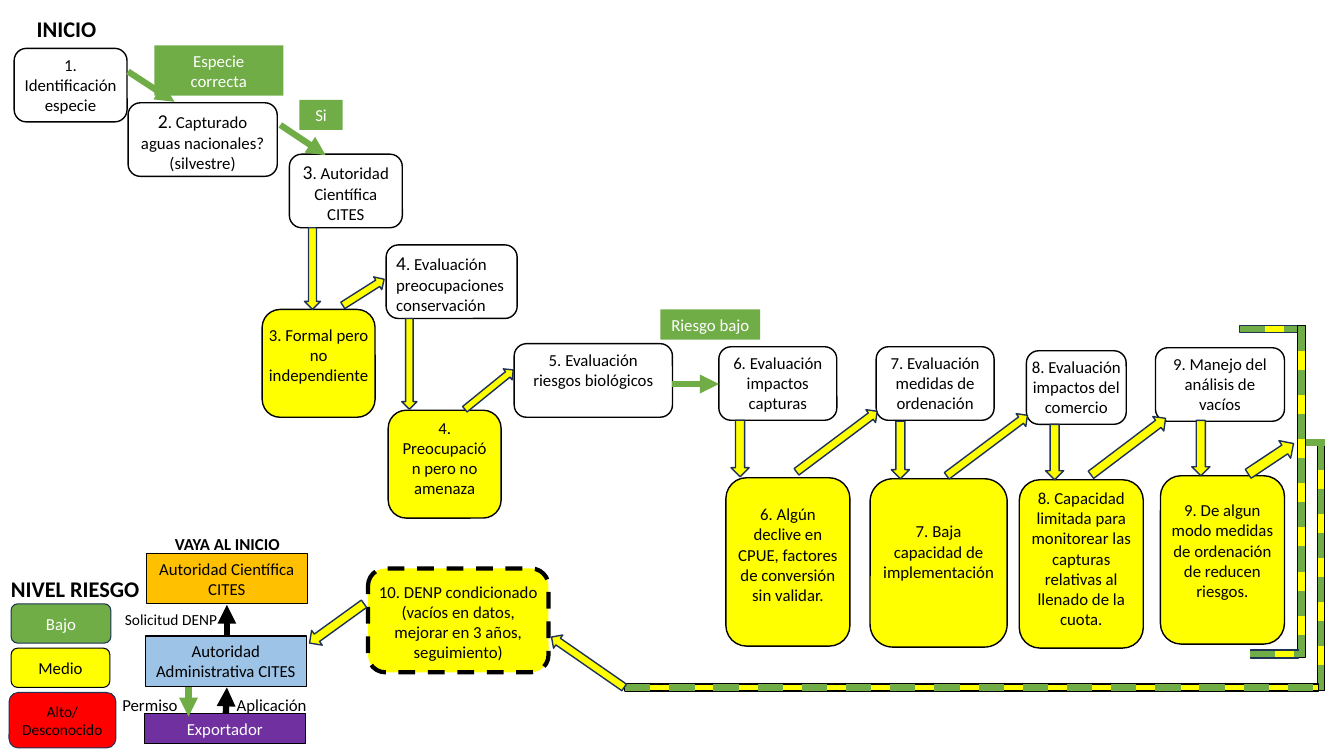
from math import atan2, degrees, hypot

from lxml import etree
from pptx import Presentation
from pptx.dml.color import RGBColor
from pptx.enum.dml import MSO_LINE
from pptx.enum.shapes import MSO_CONNECTOR, MSO_SHAPE
from pptx.enum.text import MSO_ANCHOR, PP_ALIGN
from pptx.oxml.ns import qn
from pptx.util import Inches, Pt

LEFT, MID, RIGHT = PP_ALIGN.LEFT, PP_ALIGN.CENTER, PP_ALIGN.RIGHT
TOP, HALF = MSO_ANCHOR.TOP, MSO_ANCHOR.MIDDLE
RECT, ROUND, DOWN = MSO_SHAPE.RECTANGLE, MSO_SHAPE.ROUNDED_RECTANGLE, MSO_SHAPE.DOWN_ARROW
DASH, LINE = MSO_LINE.DASH, MSO_CONNECTOR.STRAIGHT
BLACK, WHITE, GREEN, YELLOW, NAVY = "000000", "FFFFFF", "70AD47", "FFFF00", "1E3256"
CELL = 0.01
COLS, ROWS = 1333, 750
STEP = 73
CURVE = 0.1667 * 0.2929

# column, row, width, number, text, number size, alignment
steps = [
    (14, 48, 112, "1", "Identificación especie", 12, MID),
    (127, 102, 148, "2", "Capturado aguas nacionales? (silvestre)", 14, MID),
    (287, 153, 112, "3", "Autoridad Científica CITES", 14, MID),
    (383, 243, 130, "4", "Evaluación preocupaciones conservación", 14, LEFT),
    (510, 341, 157, "5", "Evaluación riesgos biológicos", 12, MID),
    (713, 344, 117, "6", "Evaluación impactos capturas", 12, MID),
    (869, 344, 117, "7", "Evaluación medidas de ordenación", 12, MID),
    (1018, 348, 99, "8", "Evaluación impactos del comercio", 12, MID),
    (1146, 345, 128, "9", "Manejo del análisis de vacíos", 12, MID),
]
risks = [
    ((260, 307, 112, 107), "3. Formal pero no independiente", 5, 15),
    ((385, 407, 112, 107), "4. Preocupación pero no amenaza", 10, 7),
    ((720, 474, 123, 167), "6. Algún declive en CPUE, factores de conversión sin validar.", 10, 26),
    ((863, 475, 136, 167), "7. Baja capacidad de implementación", 10, 42),
    ((1011, 476, 123, 167), "8. Capacidad limitada para monitorear las capturas relativas al llenado de la cuota.", 10, 8),
    ((1151, 472, 123, 167), "9. De algun modo medidas de ordenación de reducen riesgos.", 10, 24),
]
verdict = ((365, 564, 179, 103),
           "10. DENP condicionado\n(vacíos en datos, mejorar en 3 años, seguimiento)", 9, 13)
labels = [
    ((153, 45, 128, 50), "Especie correcta"),
    ((297, 99, 43, 30), "Si"),
    ((655, 307, 99, 30), "Riesgo bajo"),
]
actors = [
    ((145, 549, 160, 50), "Autoridad Científica CITES", "FFC000", BLACK),
    ((144, 631, 160, 50), "Autoridad Administrativa CITES", "9DC3E6", BLACK),
    ((143, 708, 160, 30), "Exportador", "7030A0", WHITE),
]
levels = [
    ((11, 599, 99, 39), "Bajo", GREEN, WHITE, NAVY, 12),
    ((11, 643, 98, 39), "Medio", YELLOW, BLACK, BLACK, 12),
    ((9, 687, 106, 55), "Alto/ Desconocido", "FF0000", BLACK, NAVY, 11),
]
notes = [
    ((3, 10, 126, 37), "INICIO", 16, True, MID),
    ((1, 566, 149, 37), "NIVEL RIESGO", 16, True, LEFT),
    ((141, 525, 169, 30), "VAYA AL INICIO", 12, True, MID),
    ((114, 600, 137, 29), "Solicitud DENP", 11, False, LEFT),
    ((109, 684, 77, 30), "Permiso", 12, False, RIGHT),
    ((225, 684, 103, 30), "Aplicación", 12, False, LEFT),
]
blocks = [
    (310, 226, 310, 307, 16), (406, 316, 406, 406, 15),
    (734, 417, 734, 473, 18), (893, 418, 893, 475, 18),
    (1046, 421, 1046, 476, 18), (1191, 417, 1191, 472, 18),
    (340, 303, 381, 277, 15), (461, 406, 509, 367, 14),
    (790, 468, 870, 408, 16), (939, 472, 1019, 412, 16),
    (1082, 471, 1156, 415, 18), (1238, 470, 1283, 440, 21),
    (361, 599, 307, 638, 18), (619, 682, 547, 632, 16),
]
tracks = [
    ((1230, 323, 57, 7), NAVY), ((1287, 323, 8, 329), BLACK),
    ((1240, 645, 48, 8), NAVY), ((1307, 441, 7, 244), BLACK),
    ((620, 678.5, 688, 7), BLACK),
]
paths = [
    ((127, 71, 173, 101), GREEN), ((278, 124, 323, 154), GREEN),
    ((667, 381, 713, 381), GREEN), ((187, 682, 187, 711), GREEN),
    ((225, 631, 225, 600), BLACK), ((224, 708, 225, 682), BLACK),
]

deck = Presentation()
deck.slide_width, deck.slide_height = Inches(COLS * CELL), Inches(ROWS * CELL)
slide = deck.slides.add_slide(deck.slide_layouts[6])
shapes = slide.shapes


def size(n):
    return Inches(n * CELL)


def tint(code):
    return RGBColor.from_string(code)


def style(item, **looks):
    for key, value in looks.items():
        setattr(item, key, value)


def write(item, text, hue=BLACK, pts=12, bold=False, align=MID, anchor=TOP,
          side=10, top=5, lead="", big=12, wrap=True):
    frame = item.text_frame
    style(frame, word_wrap=wrap, vertical_anchor=anchor, margin_left=size(side),
          margin_right=size(side), margin_top=size(top), margin_bottom=size(5))
    for i, words in enumerate(text.split("\n")):
        para = frame.paragraphs[0] if i == 0 else frame.add_paragraph()
        para.alignment = align
        for part, height in ((lead, big), (words, pts)):
            if part:
                run = para.add_run()
                run.text = part
                style(run.font, name="Calibri", size=Pt(height), bold=bold)
                run.font.color.rgb = tint(hue)


def shape(kind, box, fill, edge=None, width=1, dash=None):
    item = shapes.add_shape(kind, *map(size, box))
    item.shadow.inherit = False
    item.fill.solid()
    item.fill.fore_color.rgb = tint(fill)
    if edge:
        item.line.color.rgb = tint(edge)
        style(item.line, width=Pt(width), dash_style=dash)
    else:
        item.line.fill.background()
    return item


def card(box, text, side, top, fill, width=1, dash=None, **looks):
    inset = CURVE * min(box[2:])
    item = shape(ROUND, box, fill, BLACK, width, dash)
    write(item, text, side=side - inset, top=top - inset, **looks)


def stroke(ends, hue, dash=None, tip=False):
    item = shapes.add_connector(LINE, *map(size, ends))
    item.line.color.rgb = tint(hue)
    style(item.line, width=Pt(4.5), dash_style=dash)
    if tip:
        etree.SubElement(item.line._get_or_add_ln(), qn("a:tailEnd"), type="triangle")
    etree.SubElement(item._element.spPr, qn("a:effectLst"))


def block(x1, y1, x2, y2, thick):
    span = hypot(x2 - x1, y2 - y1)
    box = ((x1 + x2 - thick) / 2, (y1 + y2 - span) / 2, thick, span)
    shape(DOWN, box, YELLOW, NAVY).rotation = degrees(atan2(x1 - x2, y2 - y1))


def track(box, edge):
    x, y, w, h = box
    shape(RECT, box, YELLOW, edge)
    if w > h:
        stroke((x, y + h / 2, x + w, y + h / 2), GREEN, DASH)
    else:
        stroke((x + w / 2, y, x + w / 2, y + h), GREEN, DASH)


for x, y, w, mark, text, big, align in steps:
    wide = mark == "8"
    lead, rest = (mark, ". " + text) if big > 12 else ("", mark + ". " + text)
    card((x, y, w, STEP), rest, -3 if wide else 10, 6, WHITE,
         lead=lead, big=big, align=align)
for risk in risks:
    card(*risk, YELLOW)
card(*verdict, YELLOW, 3, DASH)
for spot in tracks:
    track(*spot)
stroke((1295, 439, 1314, 439), GREEN)
for ends in blocks:
    block(*ends)
for box, text, fill, hue in actors:
    write(shape(RECT, box, fill, BLACK, 0.75), text, hue)
for ends, hue in paths:
    stroke(ends, hue, tip=True)
for box, text in labels:
    write(shape(RECT, box, GREEN), text, WHITE)
for box, text, fill, hue, edge, pts in levels:
    write(shape(ROUND, box, fill, edge, 0.75), text, hue, pts, anchor=HALF)
for box, text, pts, bold, align in notes:
    write(shapes.add_textbox(*map(size, box)), text, BLACK, pts, bold, align)

deck.save("out.pptx")
